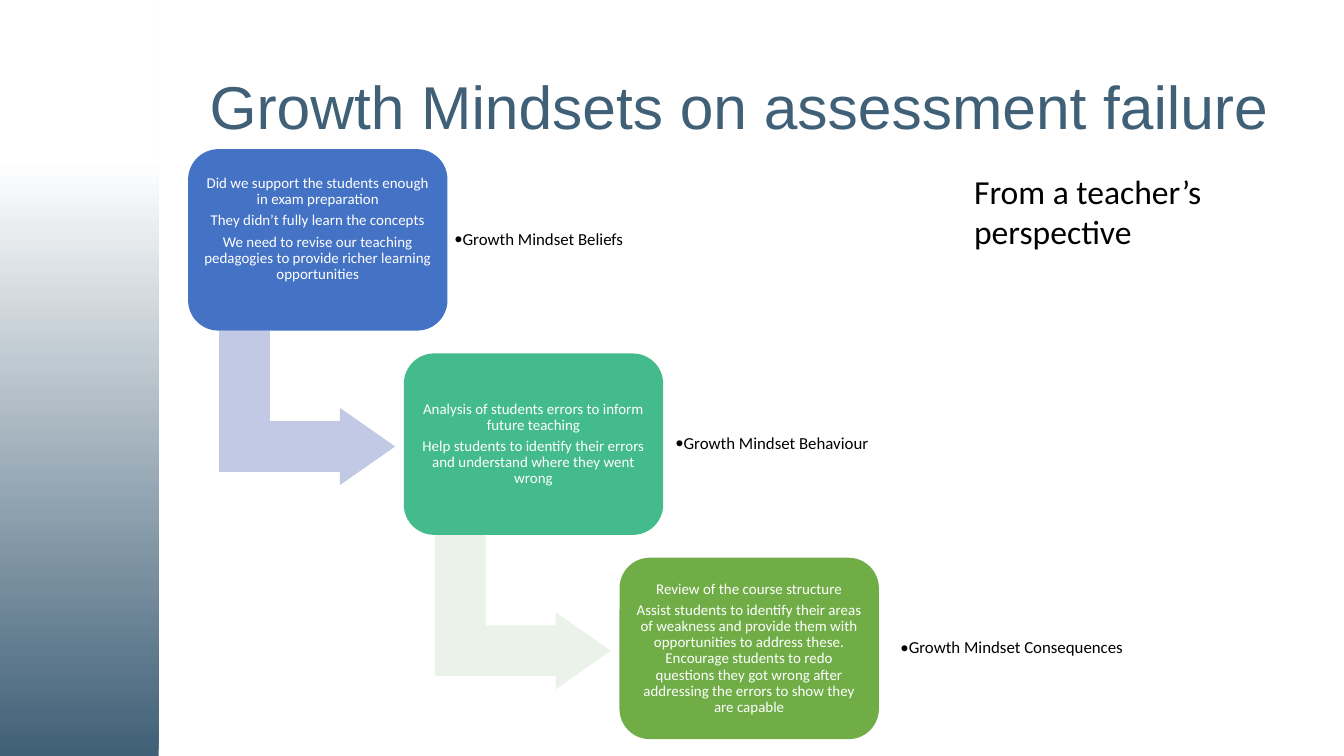
from lxml import etree
from pptx import Presentation
from pptx.dml.color import RGBColor
from pptx.enum.shapes import MSO_SHAPE
from pptx.enum.text import MSO_ANCHOR, MSO_AUTO_SIZE, PP_ALIGN
from pptx.oxml.ns import qn
from pptx.util import Inches, Pt

SLATE = RGBColor(0x40, 0x60, 0x77)
WHITE = RGBColor(0xFF, 0xFF, 0xFF)
BLACK = RGBColor(0, 0, 0)
BLUE = RGBColor(0x44, 0x72, 0xC4)
TEAL = RGBColor(0x43, 0xBB, 0x8D)
GREEN = RGBColor(0x70, 0xAD, 0x47)
LILAC = RGBColor(0xC1, 0xC9, 0xE4)
MINT = RGBColor(0xEB, 0xF2, 0xE9)

STEP_W, STEP_H = 1.93, 1.35

# Box fill, arrow fill, box lines, bottom inset, label, label gap, label width
STEPS = [
    (BLUE, LILAC,
     ["Did we support the students enough in exam preparation",
      "They didn’t fully learn the concepts",
      "We need to revise our teaching pedagogies to provide richer learning opportunities"],
     0.19, "Growth Mindset Beliefs", 0.01, 1.41),
    (TEAL, MINT,
     ["Analysis of students errors to inform future teaching",
      "Help students to identify their errors and understand where they went wrong"],
     0.03, "Growth Mindset Behaviour", 0.05, 2.6),
    (GREEN, None,
     ["Review of the course structure",
      "Assist students to identify their areas of weakness and provide them with "
      "opportunities to address these. Encourage students to redo questions they got "
      "wrong after addressing the errors to show they are capable"],
     0.03, "Growth Mindset Consequences", 0.12, 2.15),
]


def style(para, size, color, face="Calibri"):
    para.font.size = Pt(size)
    para.font.name = face
    para.font.color.rgb = color


def inset(frame, side, end):
    frame.margin_left = frame.margin_right = Inches(side)
    frame.margin_top = frame.margin_bottom = Inches(end)


def add_shape(slide, kind, x, y, w, h, color=None):
    shape = slide.shapes.add_shape(kind, Inches(x), Inches(y), Inches(w), Inches(h))
    shape.shadow.inherit = False
    shape.line.fill.background()
    if color is not None:
        shape.fill.solid()
        shape.fill.fore_color.rgb = color
    return shape


def add_text(slide, x, y, w, h, text):
    box = slide.shapes.add_textbox(Inches(x), Inches(y), Inches(w), Inches(h))
    frame = box.text_frame
    frame.word_wrap = True
    frame.text = text
    return frame


def add_side(slide, x, y, w, h):
    side = add_shape(slide, MSO_SHAPE.RECTANGLE, x, y, w, h)
    side.fill.gradient()
    side.fill.gradient_angle = 90
    for stop, place, color in zip(side.fill.gradient_stops, (0, 0.79), (SLATE, WHITE)):
        stop.position = place
        stop.color.rgb = color


def add_title(slide, x, y, w, h):
    title = slide.shapes.title
    title.left, title.top = Inches(x), Inches(y)
    title.width, title.height = Inches(w), Inches(h)
    frame = title.text_frame
    frame.text = "Growth Mindsets on assessment failure"
    frame.auto_size = MSO_AUTO_SIZE.NONE
    frame.vertical_anchor = MSO_ANCHOR.MIDDLE
    para = frame.paragraphs[0]
    para.alignment = PP_ALIGN.LEFT
    para.line_spacing = 0.9
    style(para, 32.4, SLATE, "Arial")


def add_arrow(slide, x, y, color):
    arrow = add_shape(slide, MSO_SHAPE.BENT_UP_ARROW, x, y, 1.15, 1.31, color)
    arrow.rotation = 90
    for i, value in enumerate((0.328, 0.25, 0.358)):
        arrow.adjustments[i] = value


def add_label(slide, x, y, w, h, text):
    frame = add_text(slide, x, y, w, h, text)
    inset(frame, 0.04, 0.04)
    frame.vertical_anchor = MSO_ANCHOR.MIDDLE
    para = frame.paragraphs[0]
    para.level = 1
    props = para._p.get_or_add_pPr()
    props.set("marL", str(Inches(0.06)))
    props.set("indent", str(Inches(-0.06)))
    etree.SubElement(props, qn("a:buFont")).set("typeface", "Calibri")
    etree.SubElement(props, qn("a:buChar")).set("char", "•")
    para.line_spacing = 0.9
    style(para, 9, BLACK)


def add_step(slide, x, y, step):
    fill, tint, lines, foot, label, gap, width = step
    # Arrow to the next step
    if tint is not None:
        add_arrow(slide, x + 0.31, y + 1.27, tint)
    # Rounded box
    box = add_shape(slide, MSO_SHAPE.ROUNDED_RECTANGLE, x, y, STEP_W, STEP_H, fill)
    box.adjustments[0] = 0.167
    frame = box.text_frame
    frame.word_wrap = True
    frame.vertical_anchor = MSO_ANCHOR.MIDDLE
    inset(frame, 0.05, 0.03)
    frame.margin_bottom = Inches(foot)
    frame.text = "\n".join(lines)
    for para in frame.paragraphs:
        para.alignment = PP_ALIGN.CENTER
        para.line_spacing = 0.9
        para.space_after = Pt(2.8)
        style(para, 8, WHITE)
    # Label beside the box
    add_label(slide, x + STEP_W + gap, y + 0.13, width, 1.09, label)


def add_steps(slide, x, y):
    for i, step in enumerate(STEPS):
        add_step(slide, x + i * 1.605, y + i * 1.52, step)


def add_note(slide, x, y, w, h):
    frame = add_text(slide, x, y, w, h, "From a teacher’s perspective")
    style(frame.paragraphs[0], 18, BLACK)


def main():
    deck = Presentation()
    deck.slide_width = Inches(10)
    deck.slide_height = deck.slide_width * 9 // 16
    slide = deck.slides.add_slide(deck.slide_layouts[5])
    add_side(slide, 0, 0, 1.18, deck.slide_height.inches if hasattr(deck.slide_height, "inches") else 5.63)
    add_title(slide, 1.46, 0.3, 8.21, 1.03)
    add_steps(slide, 1.4, 1.11)
    add_note(slide, 7.15, 1.22, 2.4, 0.71)
    deck.save("out.pptx")


if __name__ == "__main__":
    main()
